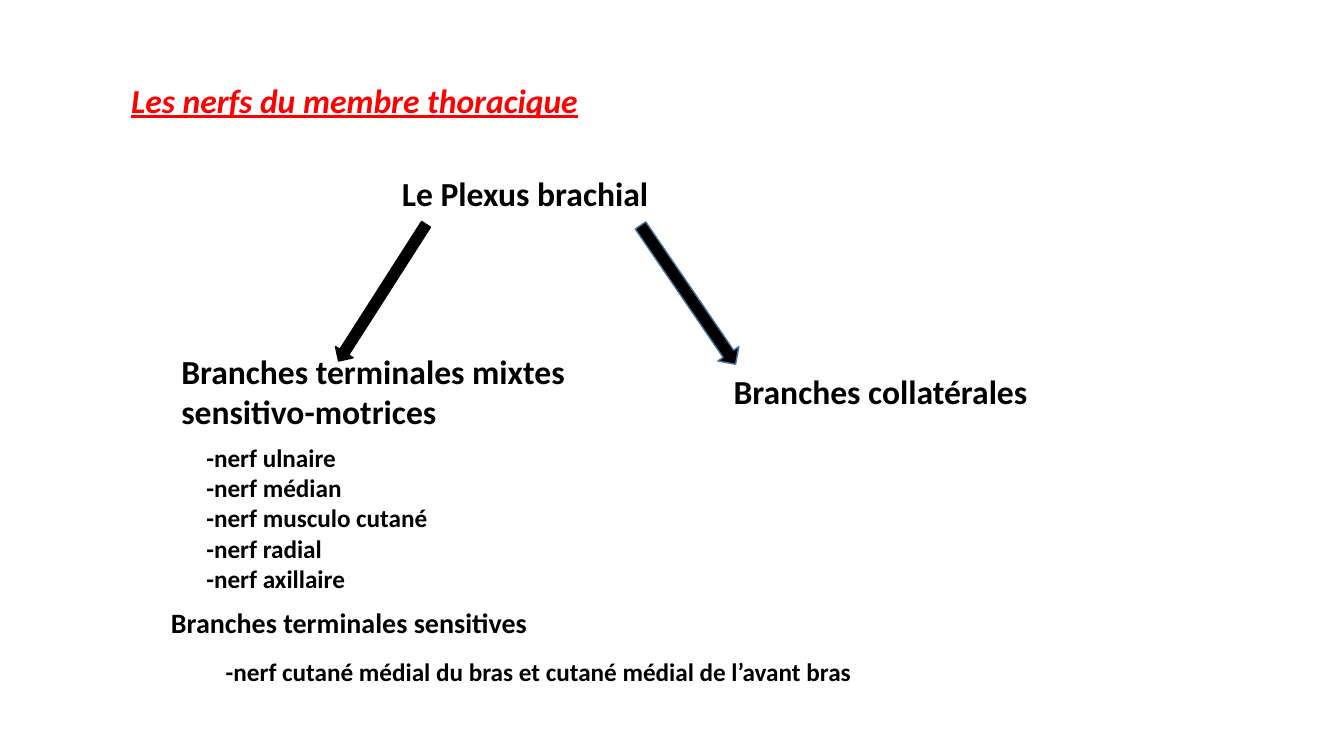
from dataclasses import dataclass

from pptx import Presentation
from pptx.dml.color import RGBColor
from pptx.enum.shapes import MSO_SHAPE
from pptx.enum.text import MSO_ANCHOR, MSO_AUTO_SIZE, PP_ALIGN
from pptx.shapes.autoshape import Shape
from pptx.slide import Slide
from pptx.util import Cm, Pt

FONT = "Calibri"
COLORS = {"title": "FF0000", "text": "000000", "arrow": "000000", "blue_edge": "43739E"}


@dataclass(frozen=True)
class Label:
    left: float
    top: float
    width: float
    height: float
    size: int
    lines: tuple[str, ...]


@dataclass(frozen=True)
class BranchArrow:
    left: float
    top: float
    width: float
    height: float
    rotation: float
    edge: str


TITLE = Label(3.05, 1.88, 15.16, 1.27, 24, ("Les nerfs du membre thoracique",))

LABELS = (
    Label(9.88, 4.22, 10.57, 1.27, 24, ("Le Plexus brachial",)),
    Label(4.32, 8.71, 11.15, 2.31, 24, ("Branches terminales mixtes sensitivo-motrices",)),
    Label(18.24, 9.22, 8.92, 1.27, 24, ("Branches collatérales",)),
    Label(4.95, 11.02, 8.69, 4.11, 18, (
        "-nerf ulnaire",
        "-nerf médian",
        "-nerf musculo cutané",
        "-nerf radial",
        "-nerf axillaire",
    )),
    Label(4.06, 15.14, 10.46, 1.12, 20, ("Branches terminales sensitives",)),
    Label(5.44, 16.41, 17.68, 1.02, 18, (
        "-nerf cutané médial du bras et cutané médial de l’avant bras",
    )),
)

ARROWS = (
    BranchArrow(9.37, 5.33, 0.53, 4.09, 32.6, "arrow"),
    BranchArrow(17.02, 5.31, 0.64, 4.24, 325.6, "blue_edge"),
)


def color(name: str) -> RGBColor:
    return RGBColor.from_string(COLORS[name])


def write_label(box: Shape, label: Label, color_name: str = "text", emphasis: bool = False) -> None:
    """Fill a box with bold lines; emphasis adds italics and an underline."""
    frame = box.text_frame
    frame.word_wrap = True
    frame.auto_size = MSO_AUTO_SIZE.NONE
    frame.vertical_anchor = MSO_ANCHOR.TOP
    for index, line in enumerate(label.lines):
        para = frame.add_paragraph() if index else frame.paragraphs[0]
        para.alignment = PP_ALIGN.LEFT
        span = para.add_run()
        span.text = line
        font = span.font
        font.name = FONT
        font.size = Pt(label.size)
        font.bold = True
        font.color.rgb = color(color_name)
        if emphasis:
            font.italic = True
            font.underline = True


def place_title(page: Slide, label: Label) -> None:
    title = page.shapes.title
    title.left, title.top = Cm(label.left), Cm(label.top)
    title.width, title.height = Cm(label.width), Cm(label.height)
    write_label(title, label, "title", emphasis=True)


def add_label(page: Slide, label: Label) -> None:
    box = page.shapes.add_textbox(
        Cm(label.left), Cm(label.top), Cm(label.width), Cm(label.height)
    )
    write_label(box, label)


def add_arrow(page: Slide, arrow: BranchArrow) -> None:
    shape = page.shapes.add_shape(
        MSO_SHAPE.DOWN_ARROW,
        Cm(arrow.left), Cm(arrow.top), Cm(arrow.width), Cm(arrow.height),
    )
    shape.rotation = arrow.rotation
    shape.shadow.inherit = False
    shape.fill.solid()
    shape.fill.fore_color.rgb = color("arrow")
    shape.line.color.rgb = color(arrow.edge)
    shape.line.width = Pt(1)


def main() -> None:
    deck = Presentation()
    deck.slide_width, deck.slide_height = Cm(33.87), Cm(19.05)
    title_only = deck.slide_layouts.get_by_name("Title Only")
    page = deck.slides.add_slide(title_only)
    place_title(page, TITLE)
    for label in LABELS:
        add_label(page, label)
    for arrow in ARROWS:
        add_arrow(page, arrow)
    deck.save("out.pptx")


if __name__ == "__main__":
    main()
